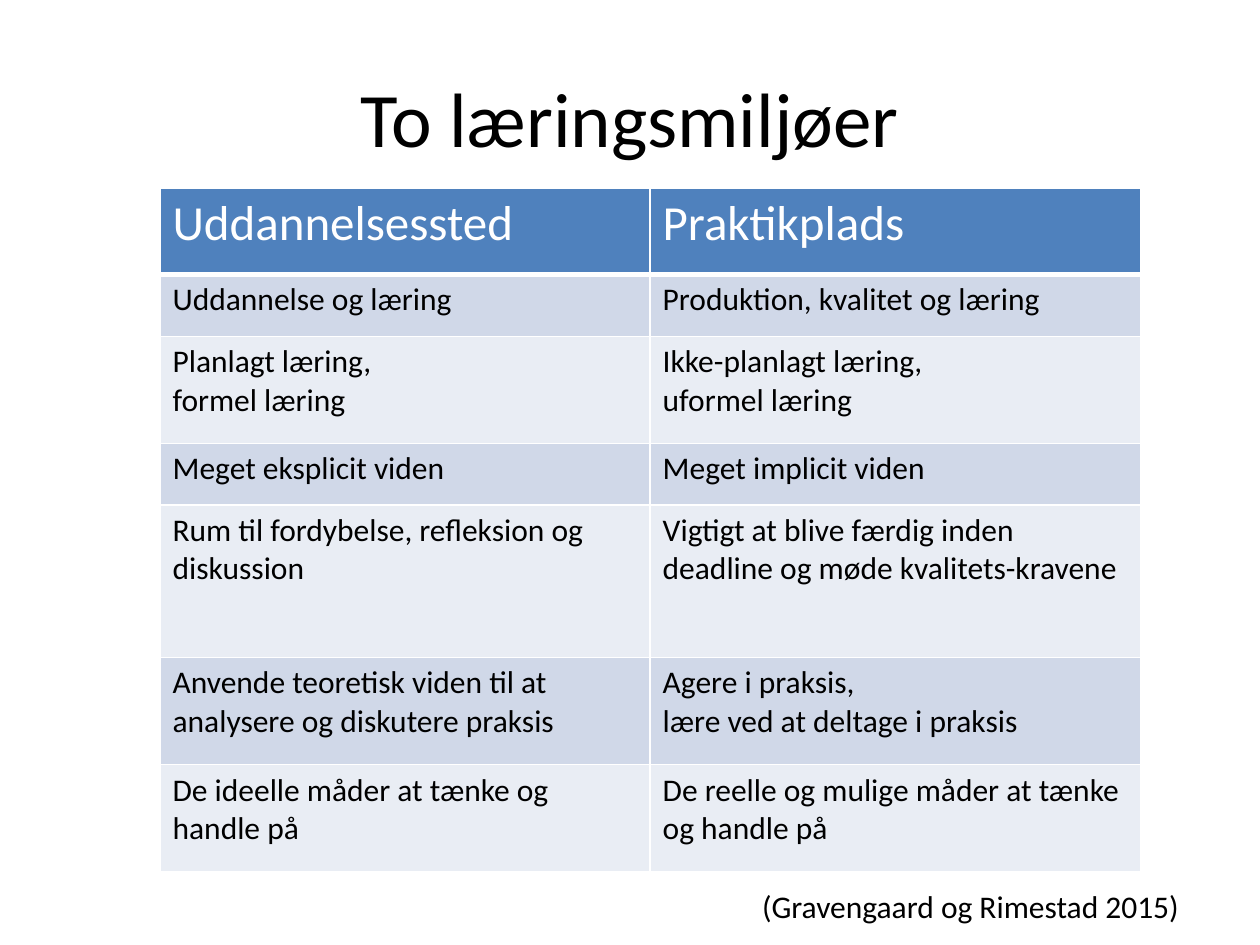
from dataclasses import dataclass

from lxml.etree import SubElement
from pptx import Presentation
from pptx.dml.color import RGBColor
from pptx.enum.text import MSO_ANCHOR, PP_ALIGN
from pptx.oxml.ns import qn
from pptx.util import Pt

PX = 9144  # EMU per px, 100 px to the inch


@dataclass(frozen=True)
class Theme:
    font: str = "Calibri"
    text: str = "000000"
    white: str = "FFFFFF"
    header: str = "4F81BD"
    bands: tuple = ("E9EDF4", "D0D8E8")
    title_size: int = 44
    header_size: int = 28
    body_size: int = 18


theme = Theme()


def style(p, size, color):
    p.font.name = theme.font
    p.font.size = Pt(size)
    p.font.bold = False
    p.font.color.rgb = RGBColor.from_string(color)


def add_borders(cell, bottom):
    tcPr = cell._tc.get_or_add_tcPr()
    for side, width in (("L", 1), ("R", 1), ("T", 1), ("B", bottom)):
        ln = SubElement(tcPr, qn(f"a:ln{side}"), w=str(Pt(width)))
        fill = SubElement(ln, qn("a:solidFill"))
        SubElement(fill, qn("a:srgbClr"), val=theme.white)


prs = Presentation()
prs.slide_width, prs.slide_height = 1000 * PX, 750 * PX
s = prs.slides.add_slide(prs.slide_layouts[5])

# Title
title = s.shapes.title
title.left, title.top, title.width, title.height = (
    50 * PX, 30 * PX, 900 * PX, 125 * PX)
tf = title.text_frame
tf.text = "To læringsmiljøer"
tf.vertical_anchor = MSO_ANCHOR.MIDDLE
p = tf.paragraphs[0]
p.alignment = PP_ALIGN.CENTER
style(p, theme.title_size, theme.text)

# Comparison table; \v is a line break within a paragraph
rows = [
    (69, "Uddannelsessted", "Praktikplads"),
    (49, "Uddannelse og læring", "Produktion, kvalitet og læring"),
    (85, "Planlagt læring, \vformel læring",
     "Ikke-planlagt læring, \vuformel læring"),
    (49, "Meget eksplicit viden", "Meget implicit viden"),
    (121, "Rum til fordybelse, refleksion og diskussion",
     "Vigtigt at blive færdig inden deadline og møde kvalitets-kravene"),
    (85, "Anvende teoretisk viden til at analysere og diskutere praksis",
     "Agere i praksis, \vlære ved at deltage i praksis"),
    (85, "De ideelle måder at tænke og handle på",
     "De reelle og mulige måder at tænke og handle på"),
]
table_height = sum(row[0] for row in rows)
table = s.shapes.add_table(len(rows), 2, 127 * PX, 149 * PX,
                           778 * PX, table_height * PX).table
for i, (height, *texts) in enumerate(rows):
    table.rows[i].height = height * PX
    is_header = i == 0
    for cell, text in zip(table.rows[i].cells, texts):
        cell.text = text
        add_borders(cell, bottom=3 if is_header else 1)
        cell.fill.solid()
        cell.fill.fore_color.rgb = RGBColor.from_string(
            theme.header if is_header else theme.bands[i % 2])
        style(cell.text_frame.paragraphs[0],
              theme.header_size if is_header else theme.body_size,
              theme.white if is_header else theme.text)

# Source reference
tf = s.shapes.add_textbox(595 * PX, 699 * PX, 400 * PX, 40 * PX).text_frame
tf.word_wrap = True
tf.text = "(Gravengaard og Rimestad 2015)"
style(tf.paragraphs[0], theme.body_size, theme.text)

prs.save("out.pptx")
